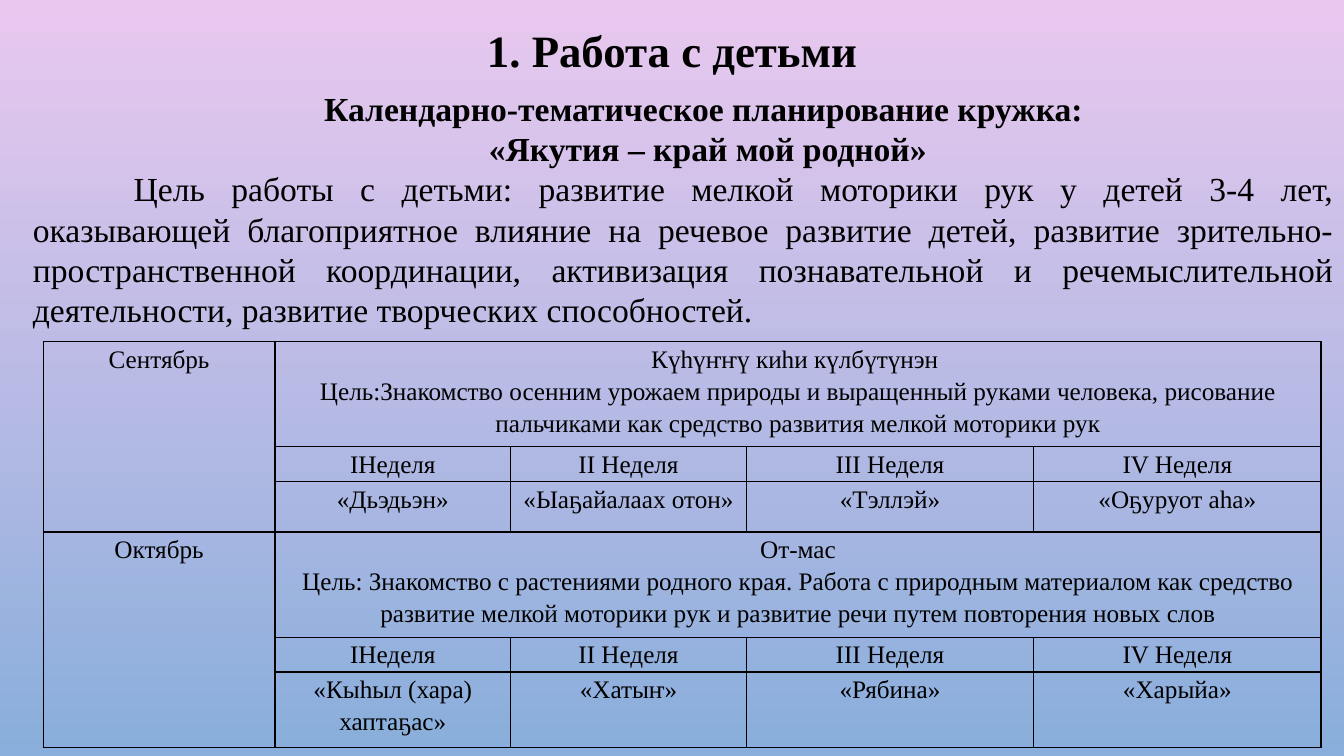
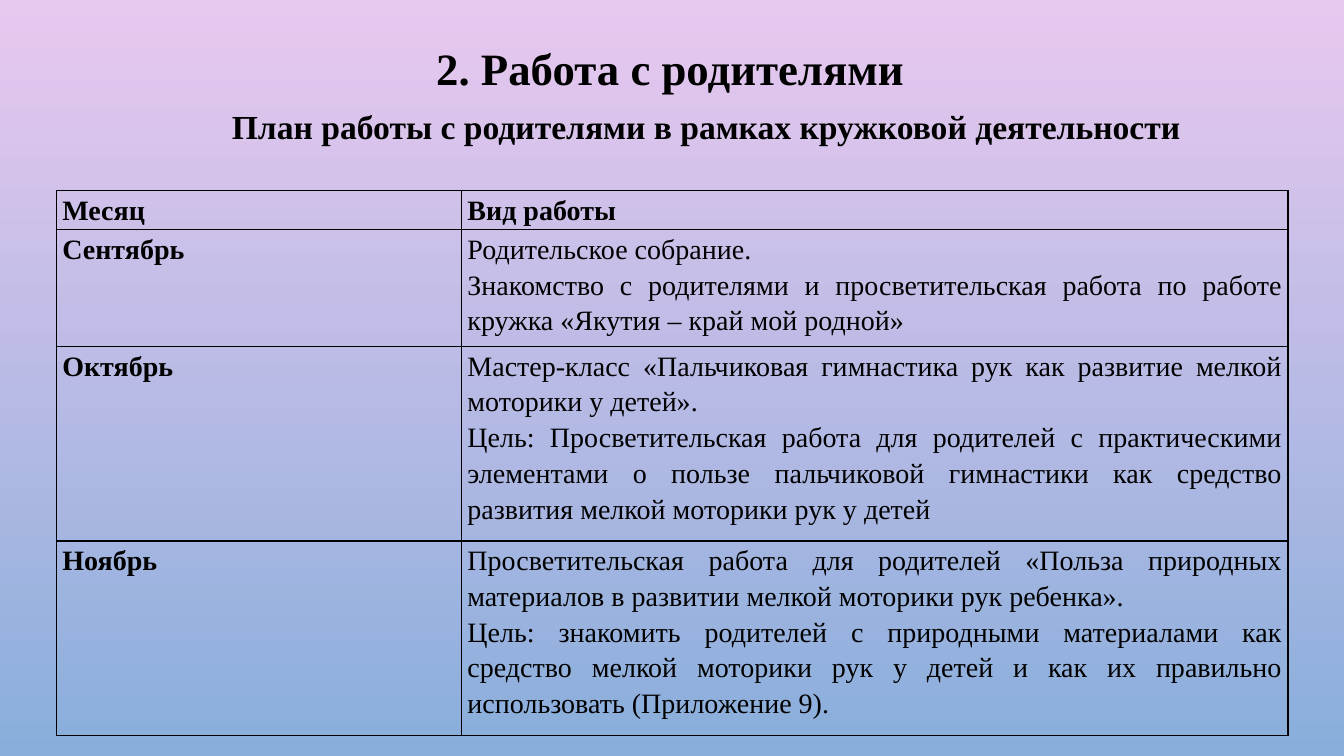
from lxml.etree import SubElement, Element
from pptx import Presentation
from pptx.dml.color import RGBColor
from pptx.enum.text import MSO_ANCHOR as Anchor, MSO_AUTO_SIZE as AutoSize, PP_ALIGN as Align
from pptx.oxml.ns import qn
from pptx.util import Cm, Pt

# Shared look
FONT = "Times New Roman"
BLACK = RGBColor(0x00, 0x00, 0x00)
PINK = RGBColor(0xE9, 0xC8, 0xEF)
BLUE = RGBColor(0x89, 0xAE, 0xDB)
TITLE_SIZE, BODY_SIZE = 32, 24
LINE_SPACING = 1.15

# Circle plan: month, theme, aim, topic of each week
WEEKS = ["IНеделя", "II Неделя", "III Неделя", "IV Неделя"]
CIRCLE_PLAN = [
    ("Сентябрь", "Күһүҥҥү киһи күлбүтүнэн ",
     "Цель:Знакомство осенним урожаем природы и выращенный руками человека, "
     "рисование пальчиками как средство развития мелкой моторики рук",
     ["«Дьэдьэн»", "«Ыаҕайалаах отон»", "«Тэллэй»", "«Оҕуруот аһа»"]),
    ("Октябрь", "От-мас",
     "Цель: Знакомство с растениями родного края. Работа с природным материалом "
     "как средство развитие мелкой моторики рук и развитие речи путем повторения новых слов",
     ["«Кыһыл (хара) хаптаҕас»", "«Хатыҥ»", "«Рябина»", "«Харыйа»"]),
]

# Parent plan: month, paragraphs
PARENT_PLAN = [
    ("Сентябрь", [
        "Родительское собрание.",
        "Знакомство с родителями и просветительская работа по работе кружка "
        "«Якутия – край мой родной»"]),
    ("Октябрь", [
        "Мастер-класс «Пальчиковая гимнастика рук как развитие мелкой моторики у детей».",
        "Цель: Просветительская работа для родителей с практическими элементами о пользе "
        "пальчиковой гимнастики как средство развития мелкой моторики рук у детей"]),
    ("Ноябрь", [
        "Просветительская работа для родителей «Польза природных материалов "
        "в развитии мелкой моторики рук ребенка».",
        "Цель: знакомить родителей с природными материалами как средство мелкой моторики "
        "рук у детей и как их правильно использовать (Приложение 9)."]),
]


def add_slide(presentation):
    slide = presentation.slides.add_slide(presentation.slide_layouts[6])
    fill = slide.background.fill
    fill.gradient()
    fill.gradient_angle = 270
    for stop, color in zip(fill.gradient_stops, (PINK, BLUE)):
        stop.color.rgb = color
    return slide


def write_paragraph(frame, index, text, size, bold, align):
    paragraph = frame.paragraphs[0] if index == 0 else frame.add_paragraph()
    paragraph.alignment = align
    run = paragraph.add_run()
    run.text = text
    run.font.name = FONT
    run.font.size = Pt(size)
    run.font.bold = bold
    run.font.color.rgb = BLACK
    return paragraph


def add_text(slide, left, top, width, height, lines, size):
    """Each line is (text, bold, alignment, first-line indent in cm)."""
    box = slide.shapes.add_textbox(Cm(left), Cm(top), Cm(width), Cm(height))
    frame = box.text_frame
    frame.word_wrap = True
    frame.auto_size = AutoSize.SHAPE_TO_FIT_TEXT
    frame.vertical_anchor = Anchor.TOP
    for index, (text, bold, align, indent) in enumerate(lines):
        paragraph = write_paragraph(frame, index, text, size, bold, align)
        paragraph._p.get_or_add_pPr().set("indent", str(Cm(indent)))
    return box


def add_title(slide, left, top, text):
    add_text(slide, left, top, 25.4, 1.62, [(text, True, Align.CENTER, 0)], TITLE_SIZE)


def set_borders(cell):
    properties = cell._tc.get_or_add_tcPr()
    for index, side in enumerate(("lnL", "lnR", "lnT", "lnB")):
        line = Element(qn(f"a:{side}"), w=str(Pt(1)))
        fill = SubElement(line, qn("a:solidFill"))
        SubElement(fill, qn("a:srgbClr"), val=str(BLACK))
        properties.insert(index, line)


def add_grid(slide, left, top, columns, rows, inset):
    """Add an unfilled table with black borders."""
    frame = slide.shapes.add_table(len(rows), len(columns), Cm(left), Cm(top),
                                   Cm(sum(columns)), Cm(sum(rows)))
    table = frame.table
    table.first_row = table.horz_banding = False
    for column, width in zip(table.columns, columns):
        column.width = Cm(width)
    for row, height in zip(table.rows, rows):
        row.height = Cm(height)
    for cell in table.iter_cells():
        cell.fill.background()
        set_borders(cell)
        cell.margin_left = cell.margin_right = Cm(inset)
        cell.margin_top = cell.margin_bottom = 0
    return table


def fill_cell(cell, texts, size, align, bold=False):
    for index, text in enumerate(texts):
        paragraph = write_paragraph(cell.text_frame, index, text, size, bold, align)
        paragraph.line_spacing = LINE_SPACING


def add_circle_table(slide):
    month_rows = [2.65, 0.87, 1.27, 2.65, 0.87, 1.9]
    table = add_grid(slide, 1.09, 8.61, [5.84, 5.94, 5.94, 7.24, 7.24], month_rows, 0.18)
    for number, (month, theme, aim, topics) in enumerate(CIRCLE_PLAN):
        top = 3 * number
        table.cell(top, 0).merge(table.cell(top + 2, 0))
        table.cell(top, 1).merge(table.cell(top, 4))
        fill_cell(table.cell(top, 0), [month], 18, Align.CENTER)
        fill_cell(table.cell(top, 1), [theme, aim], 18, Align.CENTER)
        for column, (week, topic) in enumerate(zip(WEEKS, topics), start=1):
            fill_cell(table.cell(top + 1, column), [week], 18, Align.CENTER)
            fill_cell(table.cell(top + 2, column), [topic], 18, Align.CENTER)


def add_parent_table(slide):
    table = add_grid(slide, 1.42, 4.8, [10.21, 20.83], [0.99, 2.94, 4.9, 4.9], 0.15)
    for column, heading in enumerate(("Месяц", "Вид работы")):
        fill_cell(table.cell(0, column), [heading], 20, Align.JUSTIFY, bold=True)
    for row, (month, works) in enumerate(PARENT_PLAN, start=1):
        fill_cell(table.cell(row, 0), [month], 20, Align.JUSTIFY, bold=True)
        fill_cell(table.cell(row, 1), works, 20, Align.JUSTIFY)


def build_children_slide(presentation):
    slide = add_slide(presentation)
    add_title(slide, 4.24, 0.46, "1. Работа с детьми")
    add_circle_table(slide)
    box = add_text(slide, 0.58, 2.06, 33.27, 6.4, [
        ("Календарно-тематическое планирование кружка: ", True, Align.CENTER, 1.24),
        ("«Якутия – край мой родной»", True, Align.CENTER, 1.24),
        ("Цель работы с детьми: развитие мелкой моторики рук у детей 3-4 лет, "
         "оказывающей благоприятное влияние на речевое развитие детей, развитие "
         "зрительно-пространственной координации, активизация познавательной и "
         "речемыслительной деятельности, развитие творческих способностей.",
         False, Align.JUSTIFY, 2.54),
    ], BODY_SIZE)
    box.text_frame.vertical_anchor = Anchor.MIDDLE


def build_parents_slide(presentation):
    slide = add_slide(presentation)
    add_title(slide, 4.19, 0.91, "2. Работа с родителями")
    add_text(slide, 4.83, 2.54, 25.93, 1.28, [
        ("План работы с родителями в рамках кружковой деятельности", True, Align.CENTER, 0),
    ], BODY_SIZE)
    add_parent_table(slide)


def main():
    presentation = Presentation()
    presentation.slide_width = Cm(33.87)
    presentation.slide_height = Cm(19.05)
    build_children_slide(presentation)
    build_parents_slide(presentation)
    presentation.save("out.pptx")


if __name__ == "__main__":
    main()
